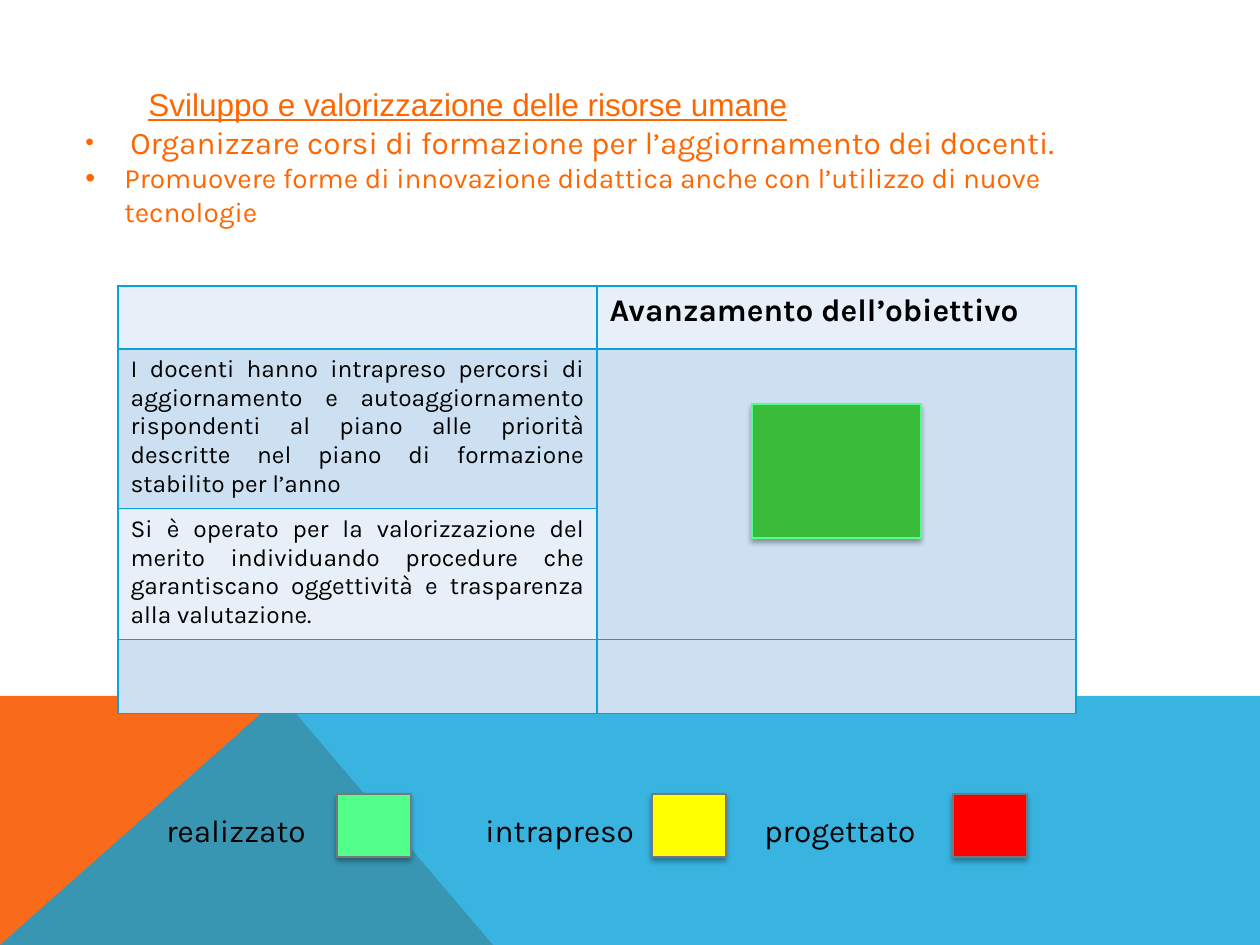
from lxml import etree
from pptx import Presentation, util as u
from pptx.dml import color
from pptx.enum import shapes, text
from pptx.oxml import ns

SCALE = 914400 / 126
ORANGE, BLUE, PALE, LIGHT = "FF6600", "08A1D9", "E7F0F8", "CCE0F1"


def px(length):
    return round(length * SCALE)


def rgb(code):
    return color.RGBColor.from_string(code)


def sub(parent, tag, **attributes):
    return etree.SubElement(parent, ns.qn(tag), attributes)


def style(font, size, code, name="Karla", **flags):
    font.size, font.name = u.Pt(size), name
    font.color.rgb = rgb(code)
    for flag, value in flags.items():
        setattr(font, flag, value)


def text_frame(slide, left, top, width, height):
    frame = slide.shapes.add_textbox(px(left), px(top), px(width), px(height)).text_frame
    frame.word_wrap = True
    return frame


def add_band(slide, points, code, opacity=100):
    corners = [(px(x), px(y)) for x, y in points]
    builder = slide.shapes.build_freeform(*corners[0], scale=1.0)
    builder.add_line_segments(corners[1:], close=True)
    band = builder.convert_to_shape()
    band.shadow.inherit = False
    band.fill.solid()
    band.fill.fore_color.rgb = rgb(code)
    band.line.fill.background()
    if opacity < 100:
        tint = band.fill._xPr.find(ns.qn("a:solidFill"))[0]
        sub(tint, "a:alpha", val=str(opacity * 1000))


def add_footer(slide, left, top, width, height):
    right, bottom, peak = left + width, top + height, left + 281
    add_band(slide, [(left, bottom), (left, top), (peak, top), (left + 493, bottom)], "F96A1B")
    add_band(slide, [(left, bottom), (peak, top), (right, top), (right, bottom)], BLUE, 80)


def add_goals(slide, left, top, width, height):
    frame = text_frame(slide, left, top, width, height)
    heading = frame.paragraphs[0]
    heading.text = "Sviluppo e valorizzazione delle risorse umane"
    heading.level = 1
    heading._p.get_or_add_pPr().set("marL", str(px(63)))
    heading._p.get_or_add_pPr().set("indent", "0")
    style(heading.font, 18, ORANGE, "Arial", underline=True)
    goals = [
        ([(" ", 14), ("Organizzare corsi di formazione per l’aggiornamento dei docenti.", 18)]),
        ([("Promuovere forme di innovazione didattica anche con l’utilizzo di nuove tecnologie", 16)]),
    ]
    for pieces in goals:
        goal = frame.add_paragraph()
        props = goal._p.get_or_add_pPr()
        props.set("marL", str(px(39)))
        props.set("indent", str(-px(39)))
        sub(props, "a:buFont", typeface="Arial")
        sub(props, "a:buChar", char="•")
        for words, size in pieces:
            run = goal.add_run()
            run.text = words
            style(run.font, size, ORANGE)


def format_cell(cell, code):
    cell.fill.solid()
    cell.fill.fore_color.rgb = rgb(code)
    props = cell._tc.get_or_add_tcPr()
    for position, side in enumerate(("a:lnL", "a:lnR", "a:lnT", "a:lnB")):
        border = sub(props, side, w=str(u.Pt(1)))
        sub(sub(border, "a:solidFill"), "a:srgbClr", val=BLUE)
        props.insert(position, border)


def add_progress(slide, left, top, width, heights):
    grid = slide.shapes.add_table(
        len(heights), 2, px(left), px(top), px(width), px(sum(heights))).table
    grid.first_row = grid.horz_banding = False
    for column in grid.columns:
        column.width = px(width / 2)
    for row, height in zip(grid.rows, heights):
        row.height = px(height)
    fills = [(PALE, PALE), (LIGHT, LIGHT), (PALE, LIGHT), (LIGHT, LIGHT)]
    for row, codes in zip(grid.rows, fills):
        for cell, code in zip(row.cells, codes):
            format_cell(cell, code)
    grid.cell(1, 1).merge(grid.cell(2, 1))
    entries = [
        (0, 1, "Avanzamento dell’obiettivo", 18, True),
        (1, 0, "I docenti hanno intrapreso percorsi di aggiornamento e autoaggiornamento "
               "rispondenti al piano alle priorità descritte nel piano di formazione "
               "stabilito per l’anno", 14, False),
        (2, 0, "Si è operato per la valorizzazione del merito individuando procedure che "
               "garantiscano oggettività e trasparenza alla valutazione.", 14, False),
    ]
    for row, column, words, size, bold in entries:
        entry = grid.cell(row, column).text_frame.paragraphs[0]
        entry.text = words
        entry.alignment = text.PP_ALIGN.JUSTIFY
        style(entry.font, size, "000000", bold=bold)


def add_swatch(slide, left, top, width, height, code, edge):
    swatch = slide.shapes.add_shape(
        shapes.MSO_SHAPE.RECTANGLE, px(left), px(top), px(width), px(height))
    swatch.fill.solid()
    swatch.fill.fore_color.rgb = rgb(code)
    swatch.line.color.rgb = rgb(edge)
    swatch.line.width = u.Pt(0.75)
    swatch.shadow.inherit = False
    effects = swatch._element.spPr.find(ns.qn("a:effectLst"))
    shade = sub(effects, "a:outerShdw", blurRad=str(u.Pt(3.1)), dist=str(u.Pt(1.8)),
                dir="5400000", rotWithShape="0")
    sub(sub(shade, "a:srgbClr", val="000000"), "a:alpha", val="35000")


def add_legend(slide, left, top):
    states = [
        ("realizzato", 0, 183, "53FF8B"),
        ("intrapreso", 319, 498, "FFFF00"),
        ("progettato", 598, 799, "FF0000"),
    ]
    for state, label_x, swatch_x, code in states:
        add_swatch(slide, left + swatch_x, top, 74, 63, code, "76787B")
        frame = text_frame(slide, left + label_x, top + 9, 179, 54)
        frame.vertical_anchor = text.MSO_ANCHOR.MIDDLE
        label = frame.paragraphs[0]
        label.text = state
        style(label.font, 18, "000000")


def main():
    deck = Presentation()
    deck.slide_width, deck.slide_height = px(1260), px(945)
    slide = deck.slides.add_slide(deck.slide_layouts[6])
    add_footer(slide, 0, 696, 1260, 249)
    add_goals(slide, 73, 79, 1053, 158)
    add_progress(slide, 118, 286, 958, [63, 159, 131, 74])
    add_swatch(slide, 752, 404, 169, 134, "3BBB3A", "53FF8B")
    add_legend(slide, 154, 794)
    deck.save("out.pptx")


if __name__ == "__main__":
    main()
